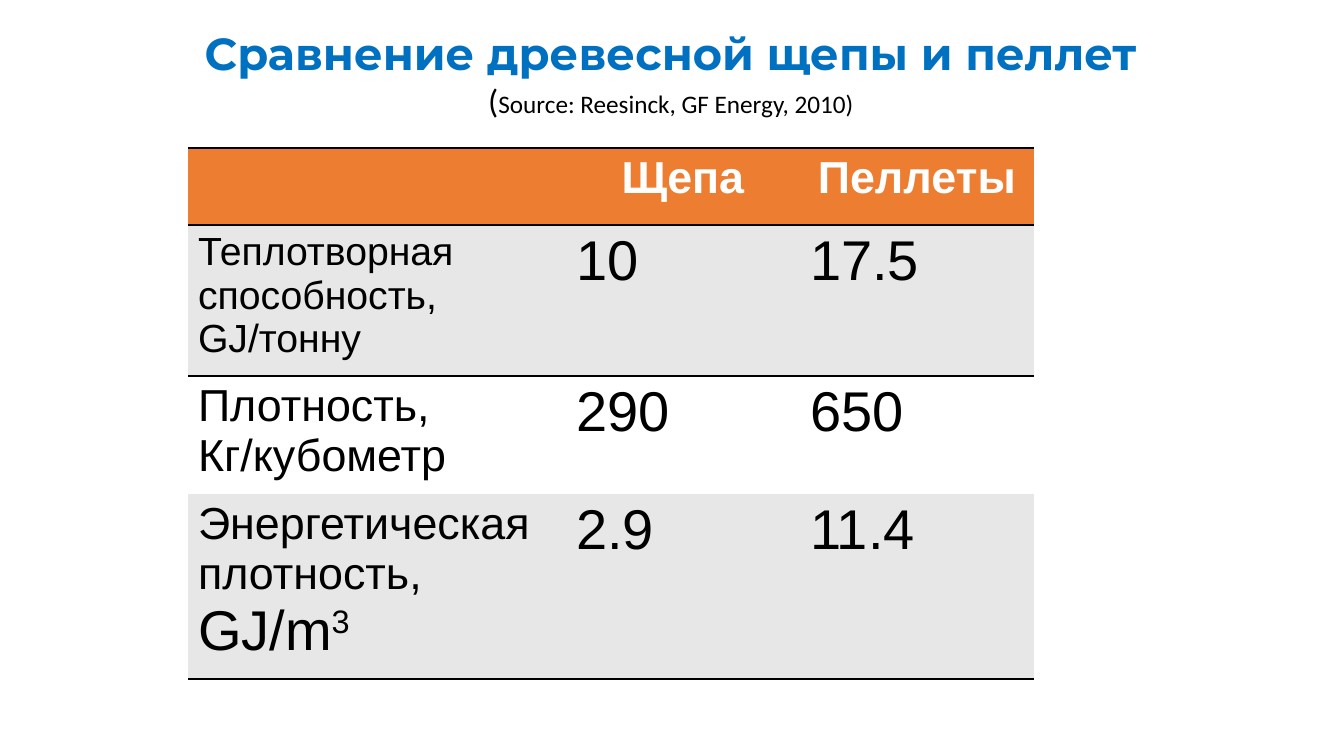
from dataclasses import dataclass

from lxml.etree import SubElement
from pptx import Presentation
from pptx.dml.color import RGBColor
from pptx.enum.text import MSO_AUTO_SIZE, PP_ALIGN
from pptx.oxml.ns import qn
from pptx.util import Emu, Pt

PX_PER_INCH = 100.8
PLAIN_TABLE_STYLE = "{2D5ABB26-0587-4C30-8999-92F81FD0307C}"
BLACK, WHITE, BLUE, ORANGE, GREY = "000000", "FFFFFF", "0070C0", "ED7D31", "E7E7E7"
COLUMN_WIDTHS = (378, 234, 234)


@dataclass(frozen=True)
class Span:
    text: str
    size: int
    font: str = "Arial"
    color: str = BLACK
    bold: bool = False
    superscript: bool = False


@dataclass(frozen=True)
class Row:
    height: int
    fill: str
    cells: tuple[list[list[Span]], ...]
    centered: bool = False
    edges: tuple[str, ...] = ()


def px(value: int) -> Emu:
    return Emu(round(value * 914400 / PX_PER_INCH))


def rgb(value: str) -> RGBColor:
    return RGBColor.from_string(value)


def write(frame, lines: list[list[Span]], centered: bool) -> None:
    for index, line in enumerate(lines):
        para = frame.paragraphs[0] if index == 0 else frame.add_paragraph()
        para.alignment = PP_ALIGN.CENTER if centered else PP_ALIGN.LEFT
        for item in line:
            span = para.add_run()
            span.text = item.text
            span.font.size = Pt(item.size)
            span.font.name = item.font
            span.font.bold = item.bold
            span.font.color.rgb = rgb(item.color)
            if item.superscript:
                span.font._element.set("baseline", "30000")


def add_edge(cell, edge: str) -> None:
    properties = cell._tc.get_or_add_tcPr()
    line = SubElement(properties, qn(f"a:{edge}"), w=str(Pt(2)))
    fill = SubElement(line, qn("a:solidFill"))
    SubElement(fill, qn("a:srgbClr"), val=BLACK)


def header(text: str) -> list[list[Span]]:
    return [[Span(text, 32, color=WHITE, bold=True)]]


def value(text: str) -> list[list[Span]]:
    return [[Span(text, 40)]]


ROWS = (
    Row(77, ORANGE, ([], header("Щепа"), header("Пеллеты")), True, ("lnT", "lnB")),
    Row(151, GREY, ([[Span("Теплотворная способность, GJ/тонну", 28)]],
                    value("10"), value("17.5")), edges=("lnT",)),
    Row(118, WHITE, ([[Span("Плотность,", 32)], [Span("Кг/кубометр", 32)]],
                     value("290"), value("650"))),
    Row(185, GREY, ([[Span("Энергетическая плотность, ", 32), Span("GJ/m", 40),
                      Span("3", 40, superscript=True)]],
                    value("2.9"), value("11.4")), edges=("lnB",)),
)
HEADING = [
    [Span("Сравнение древесной щепы и пеллет", 32, "Montserrat", BLUE, True)],
    [Span("(", 24, "Calibri"), Span("Source: Reesinck, GF Energy, 2010)", 18, "Calibri")],
]


def add_comparison(page) -> None:
    frame = page.shapes.add_table(
        len(ROWS), len(COLUMN_WIDTHS), px(188), px(148),
        px(sum(COLUMN_WIDTHS)), px(sum(row.height for row in ROWS)))
    table = frame.table
    table.horz_banding = False
    table._tbl.tblPr.find(qn("a:tableStyleId")).text = PLAIN_TABLE_STYLE
    for column, width in zip(table.columns, COLUMN_WIDTHS):
        column.width = px(width)
    for index, row in enumerate(ROWS):
        table.rows[index].height = px(row.height)
        for cell, lines in zip(table.rows[index].cells, row.cells):
            for edge in row.edges:
                add_edge(cell, edge)
            cell.fill.solid()
            cell.fill.fore_color.rgb = rgb(row.fill)
            write(cell.text_frame, lines, row.centered)


def add_heading(page) -> None:
    box = page.shapes.add_textbox(px(15), px(21), px(1312), px(159))
    frame = box.text_frame
    frame.word_wrap = True
    frame.auto_size = MSO_AUTO_SIZE.SHAPE_TO_FIT_TEXT
    write(frame, HEADING, True)
    title = frame.paragraphs[0]._p.get_or_add_pPr()
    title.set("marL", "0")
    title.set("indent", str(px(-40)))


def main() -> None:
    deck = Presentation()
    deck.slide_width, deck.slide_height = px(1344), px(756)
    page = deck.slides.add_slide(deck.slide_layouts[6])
    add_comparison(page)
    add_heading(page)
    deck.save("out.pptx")


if __name__ == "__main__":
    main()
